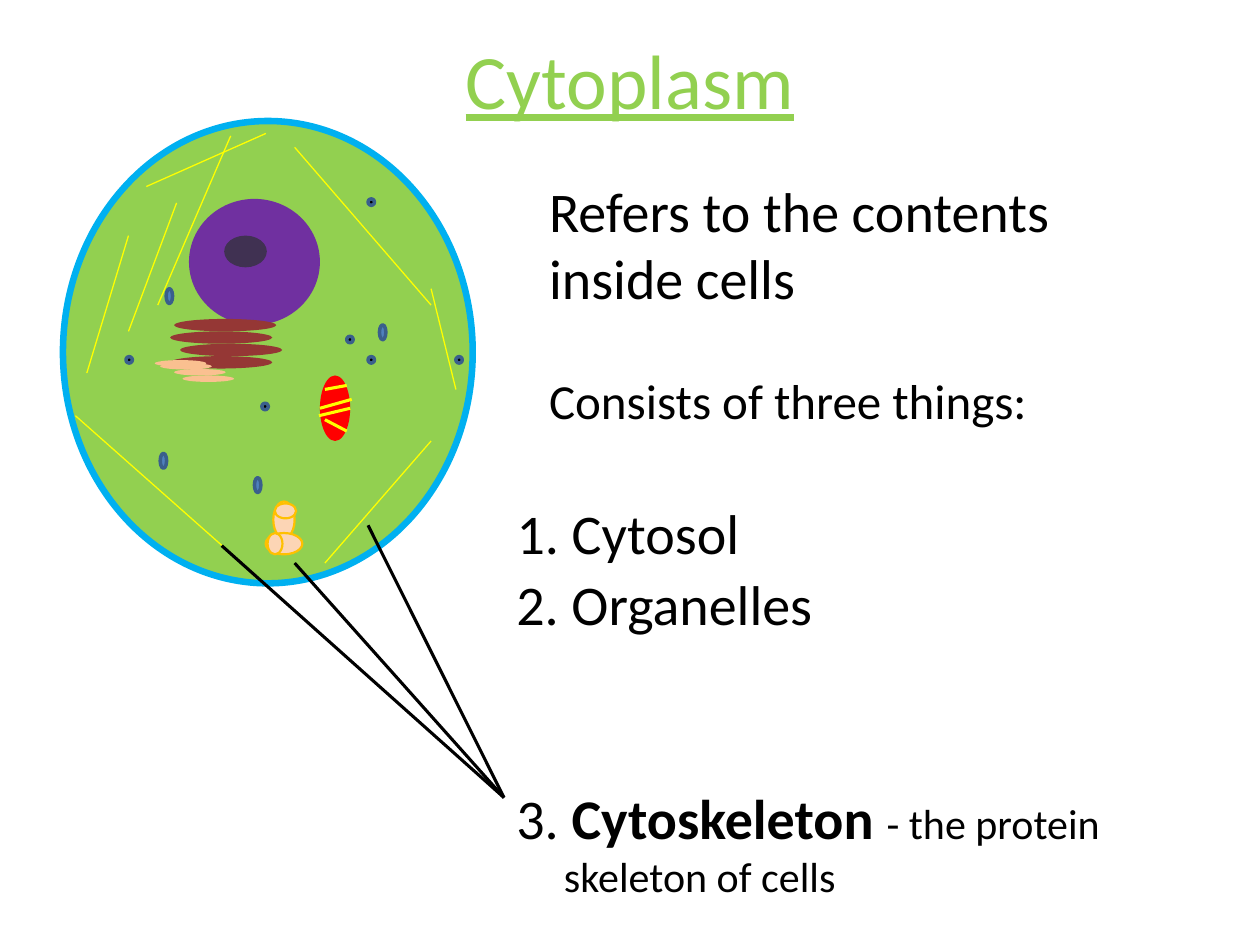
from dataclasses import dataclass

from lxml.etree import SubElement
from pptx import Presentation
from pptx.dml.color import RGBColor
from pptx.enum.shapes import MSO_CONNECTOR, MSO_SHAPE
from pptx.enum.text import MSO_ANCHOR, MSO_AUTO_SIZE, PP_ALIGN
from pptx.oxml.ns import qn
from pptx.slide import Slide
from pptx.util import Cm, Pt

BLACK = RGBColor(0x00, 0x00, 0x00)
GREEN = RGBColor(0x92, 0xD0, 0x50)
SKY = RGBColor(0x00, 0xB0, 0xF0)
PURPLE = RGBColor(0x70, 0x30, 0xA0)
DARK_PURPLE = RGBColor(0x40, 0x31, 0x52)
YELLOW = RGBColor(0xFF, 0xFF, 0x00)
MAROON = RGBColor(0x95, 0x37, 0x35)
TAN = RGBColor(0xFA, 0xC0, 0x90)
BLUE = RGBColor(0x4F, 0x81, 0xBD)
NAVY = RGBColor(0x3A, 0x5F, 0x8C)
RED = RGBColor(0xFF, 0x00, 0x00)
PEACH = RGBColor(0xFC, 0xD5, 0xB5)
GOLD = RGBColor(0xFF, 0xC0, 0x00)

FILAMENTS = [
    (6.55, 11.35, 8.69, 8.89), (4.93, 11.4, 1.52, 8.38),
    (2.59, 6.68, 3.56, 4.09), (3.18, 6.15, 4.65, 2.74),
    (8.69, 6.15, 5.94, 2.97), (8.69, 5.82, 9.19, 7.85),
    (1.75, 7.52, 2.59, 4.75), (2.95, 3.76, 5.36, 2.69),
]
RETICULUM_LEFTS = [3.51, 3.43, 3.63, 3.43]
GOLGI = [(3.12, 7.26), (3.51, 7.44), (3.68, 7.57), (3.23, 7.32)]
VESICLES = [(5.13, 9.63), (7.65, 6.55), (3.35, 5.82), (3.23, 9.14)]
CRISTAE = [
    (6.55, 7.85, 6.99, 7.77), (6.45, 8.23, 7.09, 8.05),
    (6.43, 8.38, 7.06, 8.23), (6.55, 8.46, 6.99, 8.69),
]
RIBOSOMES = [
    (6.99, 6.78), (5.28, 8.13), (2.54, 7.19),
    (7.42, 4.01), (9.19, 7.19), (7.42, 7.19),
]
POINTER_ENDS = [(5.94, 11.35), (7.42, 10.59), (4.47, 11)]


def add_run(p, text, size=32, color=BLACK, font="Calibri", bold=None, underline=None):
    r = p.add_run()
    r.text = text
    r.font.name = font
    r.font.size = Pt(size)
    r.font.bold = bold
    r.font.underline = underline
    r.font.color.rgb = color
    return r


@dataclass
class Diagram:
    """Draws styled elements on one slide, with lengths in centimetres."""

    slide: Slide

    def placeholder(self, idx, left, top, width, height):
        sp = self.slide.placeholders[idx]
        sp.left, sp.top, sp.width, sp.height = map(Cm, (left, top, width, height))
        return sp.text_frame

    def textbox(self, left, top, width, height, wrap=True):
        sp = self.slide.shapes.add_textbox(*map(Cm, (left, top, width, height)))
        tf = sp.text_frame
        tf.word_wrap = wrap
        tf.auto_size = MSO_AUTO_SIZE.SHAPE_TO_FIT_TEXT
        return tf

    def ellipse(self, left, top, width, height, fill, line=None, weight=2, group=None):
        shapes = (group or self.slide).shapes
        sp = shapes.add_shape(MSO_SHAPE.OVAL, *map(Cm, (left, top, width, height)))
        sp.shadow.inherit = False
        sp.fill.solid()
        sp.fill.fore_color.rgb = fill
        if line is None:
            sp.line.fill.background()
        else:
            sp.line.color.rgb = line
            sp.line.width = Pt(weight)
        return sp

    def line(self, x1, y1, x2, y2, color, weight):
        cxn = self.slide.shapes.add_connector(
            MSO_CONNECTOR.STRAIGHT, *map(Cm, (x1, y1, x2, y2)))
        cxn.line.color.rgb = color
        cxn.line.width = Pt(weight)
        SubElement(cxn._element.spPr, qn("a:effectLst"))
        return cxn

    def centriole(self, top, cap_left, rotation):
        group = self.slide.shapes.add_group_shape()
        self.ellipse(5.51, top, 0.43, 0.74, PEACH, GOLD, 1.25, group)
        self.ellipse(cap_left, top + 0.04, 0.43, 0.3, PEACH, GOLD, 1.25, group)
        group.rotation = rotation
        return group


def draw_cell(d):
    d.ellipse(1.27, 2.44, 8.26, 9.32, GREEN, SKY, 3.75)
    d.ellipse(3.81, 4.01, 2.64, 2.54, PURPLE)
    for ends in FILAMENTS:
        d.line(*ends, YELLOW, 0.75)
    for i, left in enumerate(RETICULUM_LEFTS):
        d.ellipse(left, 6.43 + 0.25 * i, 2.06, 0.25, MAROON)
    for left, top in GOLGI:
        d.ellipse(left, top, 1.04, 0.13, TAN)
    for left, top in VESICLES:
        d.ellipse(left, top, 0.13, 0.3, BLUE, NAVY)
    d.ellipse(4.52, 4.75, 0.86, 0.64, DARK_PURPLE)
    d.ellipse(6.45, 7.57, 0.61, 1.32, RED)
    for ends in CRISTAE:
        d.line(*ends, YELLOW, 1.75)
    for left, top in RIBOSOMES:
        d.ellipse(left, top, 0.13, 0.13, BLACK, NAVY)
    for end in POINTER_ENDS:
        d.line(10.16, 16.08, *end, BLACK, 1.75)
    d.centriole(10.11, 5.54, 0)
    d.centriole(10.59, 5.51, 270)


def write_text(d):
    tf = d.placeholder(0, 1.27, 0, 22.86, 3.18)
    tf.vertical_anchor = MSO_ANCHOR.MIDDLE
    p = tf.paragraphs[0]
    p.alignment = PP_ALIGN.CENTER
    add_run(p, "Cytoplasm", size=44, color=GREEN, underline=True)

    p = d.placeholder(1, 10.16, 9.93, 11.15, 1.7).paragraphs[0]
    pPr = p._p.get_or_add_pPr()
    pPr.set("marL", "0")
    pPr.set("indent", "0")
    SubElement(pPr, qn("a:buNone"))
    add_run(p, "1. Cytosol")

    tf = d.textbox(10.82, 3.43, 14.17, 5.38)
    add_run(tf.paragraphs[0], "Refers to the contents")
    add_run(tf.add_paragraph(), "inside cells")
    p = tf.add_paragraph()
    p.space_before = Pt(34)
    add_run(p, "Consists of three things:", size=28)

    tf = d.textbox(10.16, 11.35, 12.7, 1.63)
    add_run(tf.paragraphs[0], "2. Organelles")

    tf = d.textbox(10.16, 15.67, 12.57, 2.64, wrap=False)
    p = tf.paragraphs[0]
    add_run(p, "3. ")
    add_run(p, "Cytoskeleton ", bold=True)
    add_run(p, "- the protein", size=24)
    p = tf.add_paragraph()
    p._p.get_or_add_pPr().set("marL", str(Cm(0.96)))
    add_run(p, "skeleton of cells", size=24)


def main():
    prs = Presentation()
    prs.slide_width, prs.slide_height = Cm(25.4), Cm(19.05)
    d = Diagram(prs.slides.add_slide(prs.slide_layouts[1]))
    draw_cell(d)
    write_text(d)
    prs.save("out.pptx")


if __name__ == "__main__":
    main()
